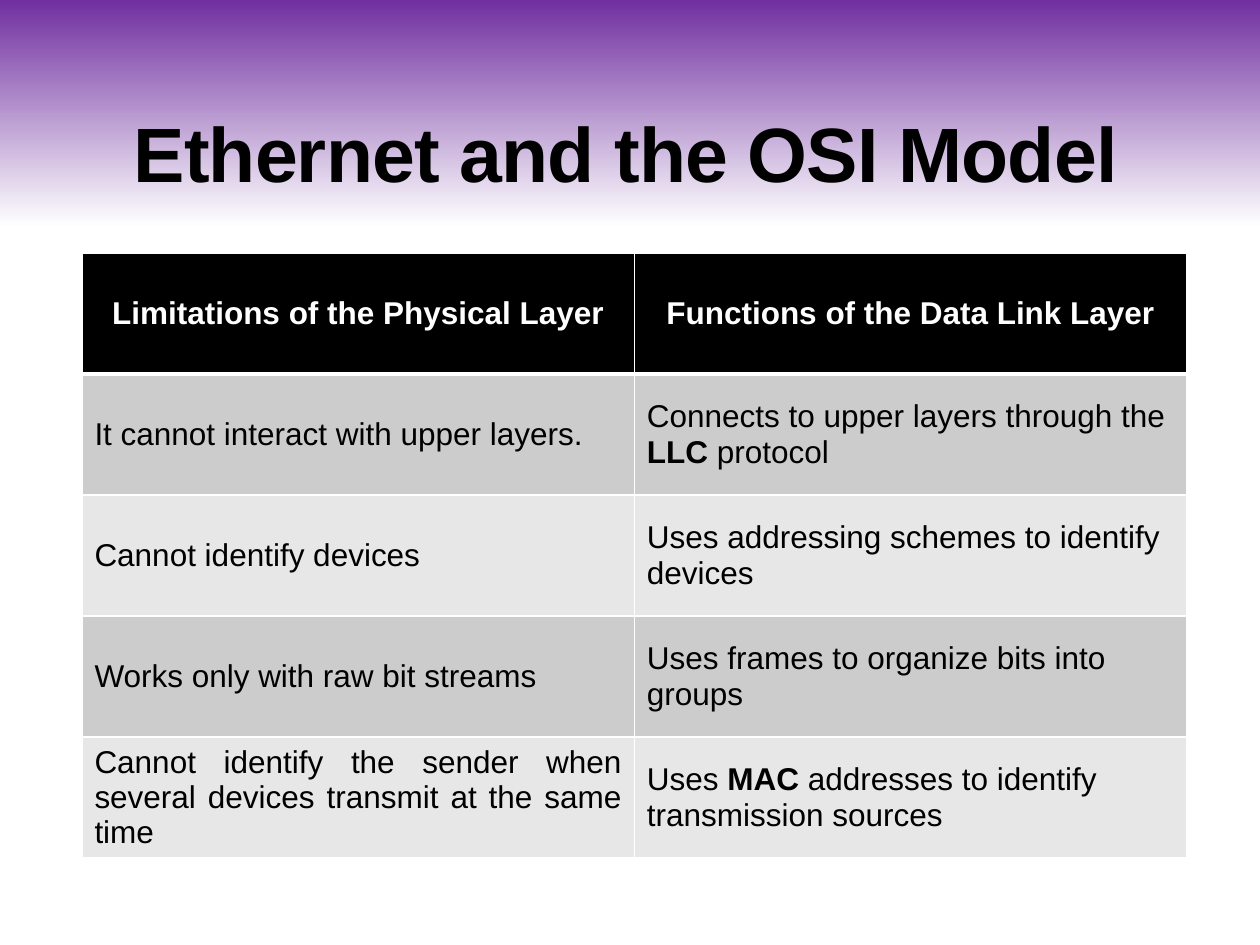
from copy import deepcopy
from lxml import etree
from pptx import Presentation
from pptx.dml.color import RGBColor
from pptx.enum.text import MSO_ANCHOR, PP_ALIGN
from pptx.oxml import parse_xml
from pptx.oxml.ns import nsdecls
from pptx.util import Inches, Pt

MID, BOTTOM = MSO_ANCHOR.MIDDLE, MSO_ANCHOR.BOTTOM
CENTER, LEFT, JUST = PP_ALIGN.CENTER, PP_ALIGN.LEFT, PP_ALIGN.JUSTIFY

TITLE = "Ethernet and the OSI Model"
ROWS = [
    ("Limitations of the Physical Layer", "Functions of the Data Link Layer"),
    ("It cannot interact with upper layers.",
     "Connects to upper layers through the *LLC* protocol"),
    ("Cannot identify devices", "Uses addressing schemes to identify devices"),
    ("Works only with raw bit streams", "Uses frames to organize bits into groups"),
    ("Cannot identify the sender when several devices transmit at the same time",
     "Uses *MAC* addresses to identify transmission sources"),
]
COLORS = {"top": "7030A0", "white": "FFFFFF", "black": "000000",
          "dark": "CCCCCC", "light": "E7E7E7"}
STOPS = [(0, "top"), (0.24, "white"), (1, "white")]
HEAD = {"size": Pt(18), "name": "Arial", "bold": True}
BODY = {**HEAD, "bold": False}
BIG = {**HEAD, "size": Pt(44)}


def color(key):
    return RGBColor.from_string(COLORS[key])


def write(para, text, form, ink):
    for i, part in enumerate(text.split("*")):
        if not part:
            continue
        run = para.add_run()
        run.text = part
        for key, value in form.items():
            setattr(run.font, key, value)
        if i % 2:
            run.font.bold = True
        run.font.color.rgb = color(ink)


def edge(cell, widths):
    props = cell._tc.get_or_add_tcPr()
    for i, (side, width) in enumerate(widths.items()):
        line = parse_xml(f'<a:ln{side} {nsdecls("a")} w="{Pt(width)}"/>')
        fill = etree.SubElement(line, line.tag.replace(f"ln{side}", "solidFill"))
        tint = etree.SubElement(fill, line.tag.replace(f"ln{side}", "srgbClr"))
        tint.set("val", COLORS["white"])
        props.insert(i, line)


def paint(slide):
    fill = slide.background.fill
    fill.gradient()
    fill.gradient_angle = 270
    stops = slide.element.xpath(".//p:bg//a:gsLst")[0]
    stops.append(deepcopy(stops[-1]))
    for stop, (place, key) in zip(fill.gradient_stops, STOPS):
        stop.position = place
        stop.color.rgb = color(key)


def head(slide):
    title = slide.shapes.title
    title.left, title.top = Inches(0.58), Inches(0.6)
    title.width, title.height = Inches(8.77), Inches(1.02)
    frame = title.text_frame
    frame.word_wrap, frame.vertical_anchor = True, BOTTOM
    para = frame.paragraphs[0]
    para.alignment, para.line_spacing = CENTER, 0.85
    write(para, TITLE, BIG, "black")
    para.runs[0].font._element.set("spc", "-50")


def grid(slide):
    count = len(ROWS)
    table = slide.shapes.add_table(
        count, 2, Inches(0.65), Inches(2.01),
        Inches(8.77), Inches(0.96 * count)).table
    for r, row in enumerate(ROWS):
        top = r == 0
        back = "black" if top else ("light", "dark")[r % 2]
        widths = {"L": 1, "R": 1, "T": 3 if r == 1 else 1, "B": 3 if top else 1}
        for c, text in enumerate(row):
            cell = table.cell(r, c)
            cell.vertical_anchor = MID
            cell.fill.solid()
            cell.fill.fore_color.rgb = color(back)
            edge(cell, widths)
            para = cell.text_frame.paragraphs[0]
            para.alignment = CENTER if top else (JUST, LEFT)[c]
            write(para, text, HEAD if top else BODY, "white" if top else "black")


def main():
    deck = Presentation()
    deck.slide_width, deck.slide_height = Inches(10), Inches(7.5)
    slide = deck.slides.add_slide(deck.slide_layouts[5])
    paint(slide)
    head(slide)
    grid(slide)
    deck.save("out.pptx")


if __name__ == "__main__":
    main()
